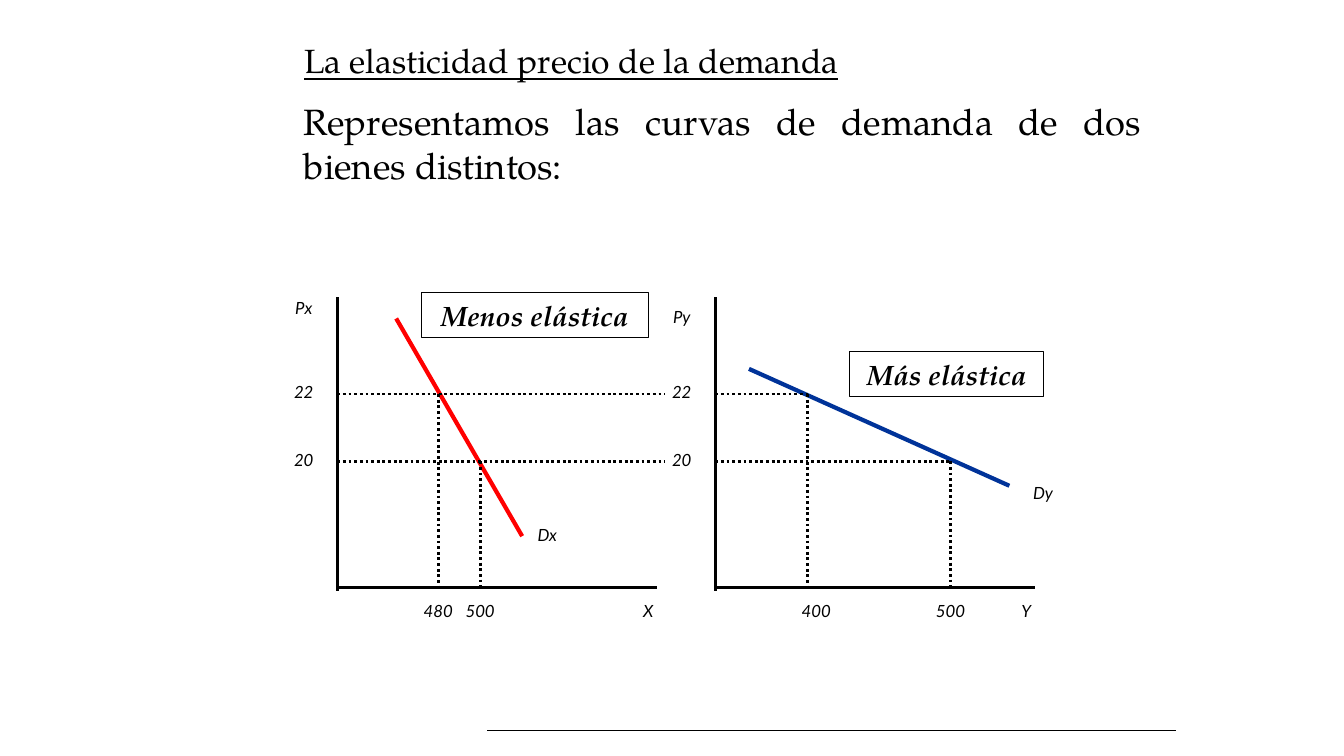
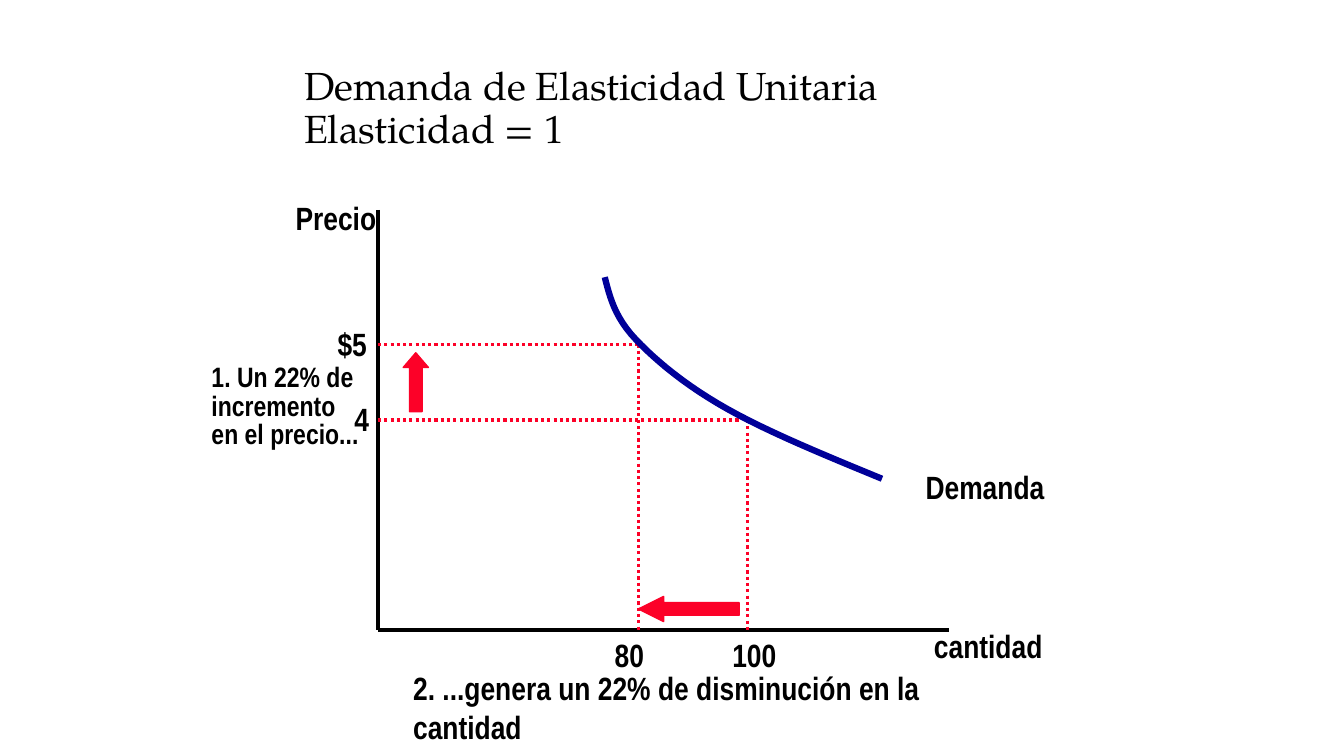
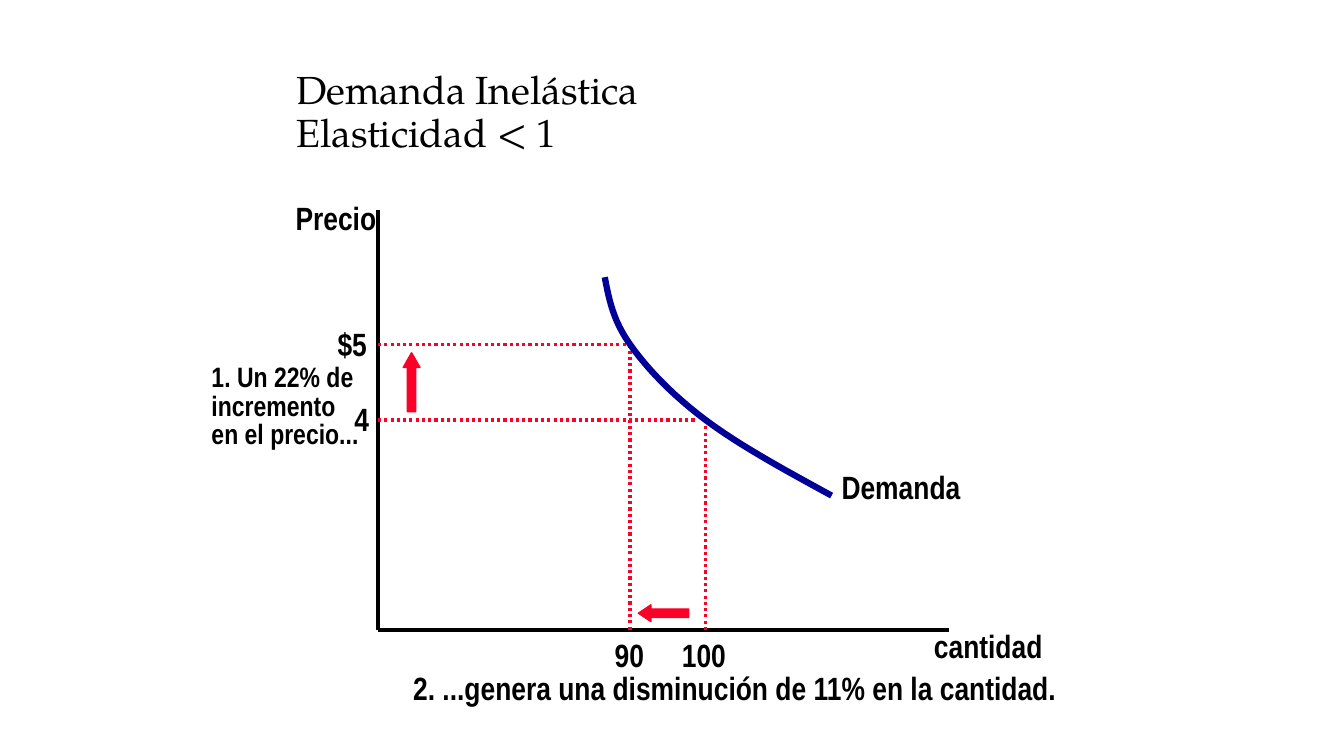
from lxml import etree
from pptx import Presentation
from pptx.dml.color import RGBColor
from pptx.enum.dml import MSO_LINE
from pptx.enum.shapes import MSO_CONNECTOR, MSO_SHAPE
from pptx.enum.text import MSO_ANCHOR, MSO_AUTO_SIZE, PP_ALIGN
from pptx.oxml.ns import qn
from pptx.util import Pt

STRAIGHT = MSO_CONNECTOR.STRAIGHT
RECTANGLE, UP_ARROW, LEFT_ARROW = MSO_SHAPE.RECTANGLE, MSO_SHAPE.UP_ARROW, MSO_SHAPE.LEFT_ARROW
DOTTED = MSO_LINE.ROUND_DOT
LEFT, CENTER, JUSTIFY = PP_ALIGN.LEFT, PP_ALIGN.CENTER, PP_ALIGN.JUSTIFY
MIDDLE = MSO_ANCHOR.MIDDLE
FIXED, GROW = MSO_AUTO_SIZE.NONE, MSO_AUTO_SIZE.SHAPE_TO_FIT_TEXT

COLORS = {"ink": "000000", "less": "FF0000", "more": "003399", "guide": "FC0128", "demand": "000099"}
SERIF, SANS, NARROW = "TeX Gyre Pagella", "Lato", "Arial Narrow"
HEADING = {"name": SERIF, "size": Pt(28)}
UNDERLINED = {"name": SERIF, "size": Pt(24), "underline": True}
LEAD = {"name": SERIF, "size": Pt(26)}
TAG = {"name": SERIF, "size": Pt(20), "bold": True, "italic": True}
TICK = {"name": SANS, "size": Pt(12), "italic": True}
LABEL = {"name": NARROW, "size": Pt(23), "bold": True}
STEP = {"name": NARROW, "size": Pt(20), "bold": True}


def paint(target, color):
    target.rgb = RGBColor.from_string(COLORS[color])


def write(frame, text, style, align=LEFT, spacing=None):
    para = frame.paragraphs[0]
    para.alignment = align
    para.line_spacing = spacing
    for index, line in enumerate(text.split("\n")):
        if index:
            para.add_line_break()
        span = para.add_run()
        span.text = line
        for name, value in style.items():
            setattr(span.font, name, value)
        paint(span.font.color, "ink")


def add_title(page, text, area, style):
    title = page.shapes.title
    title.left, title.top, title.width, title.height = map(Pt, area)
    frame = title.text_frame
    frame.auto_size = FIXED
    frame.vertical_anchor = MIDDLE
    write(frame, text, style, spacing=0.9)


def add_text(page, text, area, style, align=LEFT, spacing=None):
    box = page.shapes.add_textbox(*map(Pt, area))
    box.text_frame.word_wrap = True
    box.text_frame.auto_size = GROW
    write(box.text_frame, text, style, align, spacing)


def add_line(page, start, end, color="ink", width=2, dash=None):
    line = page.shapes.add_connector(STRAIGHT, *map(Pt, (*start, *end)))
    etree.SubElement(line._element.spPr, qn("a:effectLst"))
    paint(line.line.color, color)
    line.line.width = Pt(width)
    line.line.dash_style = dash


def add_block(page, kind, area, color, width, filled):
    block = page.shapes.add_shape(kind, *map(Pt, area))
    block.shadow.inherit = False
    if filled:
        block.fill.solid()
        paint(block.fill.fore_color, color)
    else:
        block.fill.background()
    paint(block.line.color, color)
    block.line.width = Pt(width)
    return block


def add_arrow(page, kind, area, head):
    arrow = add_block(page, kind, area, "guide", 1, True)
    arrow.adjustments[0] = 0.5
    arrow.adjustments[1] = head / min(area[2:])


def add_curve(page, points, color, width, steps=12):
    track = [points[0]]
    for first in range(0, len(points) - 1, 3):
        knots = points[first:first + 4]
        for step in range(1, steps + 1):
            t = step / steps
            weights = ((1 - t) ** 3, 3 * t * (1 - t) ** 2, 3 * t * t * (1 - t), t ** 3)
            track.append(tuple(sum(w * knot[axis] for w, knot in zip(weights, knots))
                               for axis in (0, 1)))
    track = [(Pt(x), Pt(y)) for x, y in track]
    builder = page.shapes.build_freeform(*track[0])
    builder.add_line_segments(track[1:], close=False)
    curve = builder.convert_to_shape()
    curve.shadow.inherit = False
    curve.fill.background()
    paint(curve.line.color, color)
    curve.line.width = Pt(width)


def comparison_panel(page, area, good):
    left, top, width, height = area
    base = top + height

    def tick(text, x, y):
        add_text(page, text, (left + x, top + y, 36, 21.6), TICK, CENTER)

    add_line(page, (left, top), (left, base + 3))
    add_line(page, (left, base), (left + width, base))
    (x1, y1), (x2, y2) = good["curve"]
    add_line(page, (left + x1, top + y1), (left + x2, top + y2), good["color"], 3)
    for price, level, (quantity, x, shift), reach in zip(
            ("22", "20"), (69, 117), good["quantities"], good["reach"]):
        add_line(page, (left, top + level), (left + reach, top + level), dash=DOTTED)
        add_line(page, (left + x, top + level), (left + x, base), dash=DOTTED)
        tick(price, -42, level - 12)
        tick(quantity, x - 18 + shift, height + 6)
    tick("P" + good["name"], -42, good["price_top"])
    tick(good["name"].upper(), 204, height + 6)
    tick("D" + good["name"], *good["label"])
    x, y, tag_width = good["tag_area"]
    tag = add_block(page, RECTANGLE, (left + x, top + y, tag_width, 32), "ink", 0.75, False)
    write(tag.text_frame, good["tag"], TAG, CENTER)


def demand_panel(page, area, case):
    left, top, width, height = area
    base = top + height

    def label(text, x, y, wide):
        add_text(page, text, (left + x, top + y, wide, 34.5), LABEL)

    add_line(page, (left, top), (left, base), width=2.25)
    add_line(page, (left, base), (left + width, base), width=2.25)
    label("cantidad", 390, height - 6, 96)
    label("Precio", -66, -12, 76)
    label("4", -24, 132, 30)
    label("$5", -36, 78, 40)
    high, low = case["drops"]
    for x, level, reach in ((high, 96, high), (low, 150, low - 6)):
        add_line(page, (left, top + level), (left + reach, top + level), "guide", 2.25, DOTTED)
        add_line(page, (left + x, top + level), (left + x, base), "guide", 2.25, DOTTED)
    add_text(page, "1. Un 22% de\nincremento\nen el precio...",
             (left - 126, top + 107, 124, 69), STEP, spacing=0.85)
    add_arrow(page, UP_ARROW, (left + 18, top + 102, case["thick"], 42), 10.5)
    add_curve(page, [(left + x, top + y) for x, y in case["curve"]], "demand", 4.5)
    label("Demanda", case["label_x"], 180, 106)
    label(case["quantity"], 162, height, 40)
    label("100", case["hundred_x"], height, 52)
    label(case["caption"], 18, height + 24, case["caption_width"])
    add_arrow(page, LEFT_ARROW,
              (left + 186, base - 6 - case["thick"], case["arrow_width"], case["thick"]),
              case["arrow_head"])


GOODS = (
    ((241, 212.5, 228, 207), {
        "name": "x", "color": "less", "curve": ((42, 15), (132, 170.5)),
        "quantities": (("480", 72, 0), ("500", 102, 0)), "reach": (234, 234),
        "price_top": -3.5, "label": (132, 159),
        "tag": "Menos elástica", "tag_area": (60, -3.5, 162)}),
    ((511, 212.5, 228, 207), {
        "name": "y", "color": "more", "curve": ((24, 51), (210, 134.5)),
        "quantities": (("400", 66, 6), ("500", 168, 0)), "reach": (66, 168),
        "price_top": 3, "label": (216, 129),
        "tag": "Más elástica", "tag_area": (96, 38.5, 138.5)}),
)
CASES = (
    {"title": "Demanda de Elasticidad Unitaria\nElasticidad = 1",
     "title_area": (210, 36, 594, 84), "drops": (186, 264), "thick": 18,
     "curve": ((162, 48), (165.6, 62.4), (169.2, 76.8), (184.3, 92.6), (198.7, 107.8),
               (220.3, 125.8), (249.8, 142.3), (279.4, 158.9), (319.7, 175.4), (360, 192)),
     "label_x": 384, "quantity": "80", "hundred_x": 246, "arrow_width": 72, "arrow_head": 18,
     "caption": "2. ...genera un 22% de disminución en la cantidad", "caption_width": 440},
    {"title": "Demanda Inelástica\nElasticidad < 1",
     "title_area": (204.5, 36, 605.5, 90), "drops": (180, 234), "thick": 12,
     "curve": ((162, 48), (165, 64), (168, 79), (180, 96), (192, 113),
               (210, 132), (234, 150), (258, 168), (291, 186), (324, 204)),
     "label_x": 324, "quantity": "90", "hundred_x": 210, "arrow_width": 36, "arrow_head": 9,
     "caption": "2. ...genera una disminución de 11% en la cantidad.", "caption_width": 480},
)


def comparison_slide(page):
    add_title(page, "La elasticidad precio de la demanda", (210, 18, 486, 54), UNDERLINED)
    add_line(page, (348, 522), (840, 522), width=0.75)
    add_text(page, "Representamos las curvas de demanda de dos bienes distintos:",
             (210, 67.5, 613, 70.5), LEAD, JUSTIFY)
    for area, good in GOODS:
        comparison_panel(page, area, good)


def demand_slide(page, case):
    add_title(page, case["title"], case["title_area"], HEADING)
    demand_panel(page, (270, 150, 408, 300), case)


def main():
    deck = Presentation()
    deck.slide_width, deck.slide_height = Pt(960), Pt(540)
    layout = deck.slide_layouts[5]
    comparison_slide(deck.slides.add_slide(layout))
    for case in CASES:
        demand_slide(deck.slides.add_slide(layout), case)
    deck.save("out.pptx")


if __name__ == "__main__":
    main()
